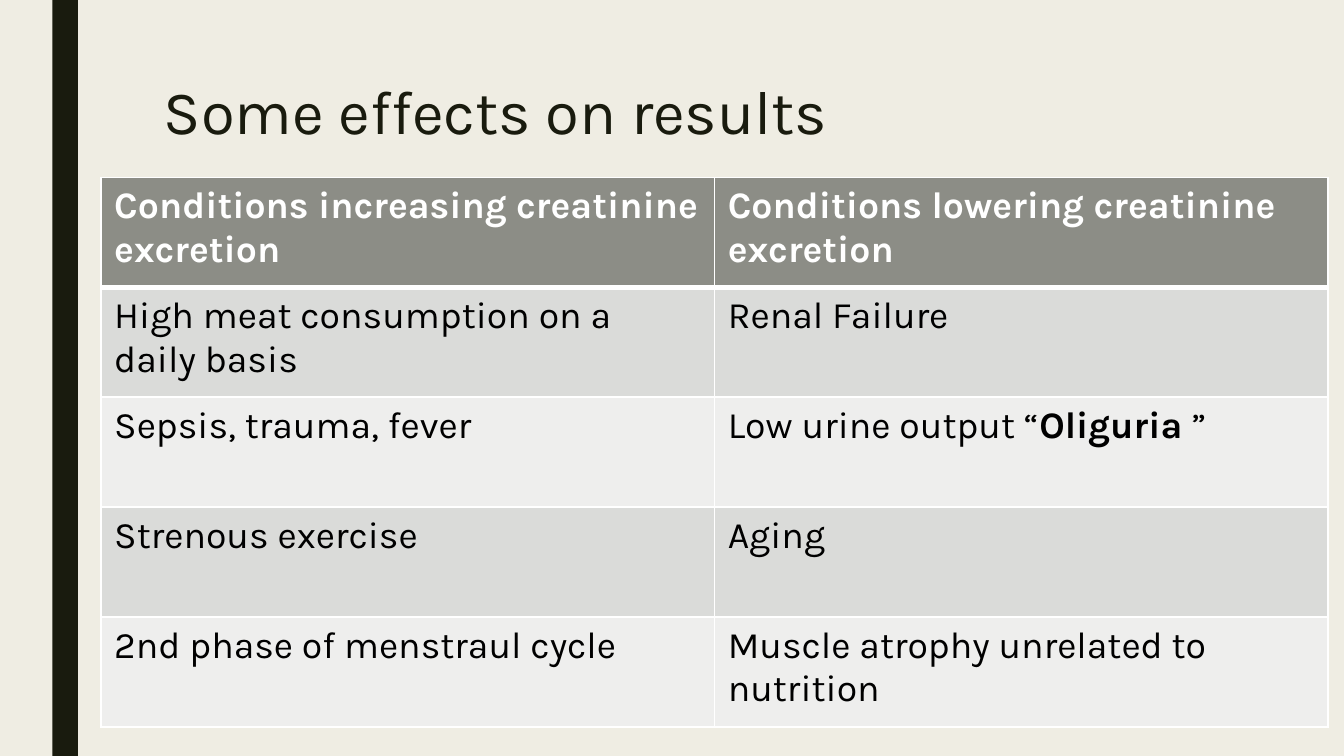
from lxml import etree
from pptx import Presentation
from pptx import util as u
from pptx.dml.color import RGBColor
from pptx.enum import shapes, text
from pptx.oxml.ns import qn

FONT = "Karla"
BACKGROUND, DARK = "EFEDE3", "191B0E"
WHITE, BLACK = "FFFFFF", "000000"
HEADER_FILL, BAND_FILLS = "8C8D86", ("DADBD9", "EEEEED")

# Each cell is a list of (text, bold) runs.
ROWS = [
    [[("Conditions increasing creatinine excretion", True)],
     [("Conditions lowering creatinine excretion", True)]],
    [[("High meat consumption on a daily basis", False)],
     [("Renal Failure", False)]],
    [[("Sepsis, trauma, fever", False)],
     [("Low urine output “", False), ("Oliguria", True), (" ”", False)]],
    [[("Strenous exercise", False)],
     [("Aging", False)]],
    [[("2nd phase of menstraul cycle", False)],
     [("Muscle atrophy unrelated to nutrition", False)]],
]


def set_fill(fill, color):
    fill.solid()
    fill.fore_color.rgb = RGBColor.from_string(color)


def add_run(paragraph, content, size, color, bold=False):
    run = paragraph.add_run()
    run.text = content
    run.font.name = FONT
    run.font.size = u.Pt(size)
    run.font.bold = bold
    run.font.color.rgb = RGBColor.from_string(color)


def add_side_bar(slide, height):
    bar = slide.shapes.add_shape(shapes.MSO_SHAPE.RECTANGLE, u.Inches(0.39), 0,
                                 u.Inches(0.19), height)
    bar.shadow.inherit = False
    set_fill(bar.fill, DARK)
    bar.line.fill.background()


def format_title(title, content):
    title.left, title.top = u.Inches(1.12), u.Inches(0.56)
    title.width, title.height = u.Inches(7.88), u.Inches(1.22)
    frame = title.text_frame
    frame.word_wrap = True
    frame.auto_size = text.MSO_AUTO_SIZE.NONE
    frame.vertical_anchor = text.MSO_ANCHOR.TOP
    paragraph = frame.paragraphs[0]
    paragraph.alignment = text.PP_ALIGN.LEFT
    paragraph.line_spacing = 0.89
    add_run(paragraph, content, 33, DARK)


def set_borders(cell, top, bottom):
    """Draw white borders; must run before the cell gets its fill."""
    properties = cell._tc.get_or_add_tcPr()
    for side, width in (("L", 1), ("R", 1), ("T", top), ("B", bottom)):
        line = etree.SubElement(properties, qn(f"a:ln{side}"), w=str(u.Pt(width)))
        fill = etree.SubElement(line, qn("a:solidFill"))
        etree.SubElement(fill, qn("a:srgbClr"), val=WHITE)


def add_conditions_table(slide):
    frame = slide.shapes.add_table(len(ROWS), len(ROWS[0]), u.Inches(0.75),
                                   u.Inches(1.32), u.Inches(9.13), u.Inches(4.09))
    table = frame.table
    for row_index, row in enumerate(ROWS):
        is_header = row_index == 0
        fill = HEADER_FILL if is_header else BAND_FILLS[(row_index - 1) % 2]
        for column_index, runs in enumerate(row):
            cell = table.cell(row_index, column_index)
            set_borders(cell, top=3 if row_index == 1 else 1,
                        bottom=3 if is_header else 1)
            set_fill(cell.fill, fill)
            for content, bold in runs:
                add_run(cell.text_frame.paragraphs[0], content, 20,
                        WHITE if is_header else BLACK, bold)


def main():
    presentation = Presentation()
    presentation.slide_width = u.Inches(10)
    presentation.slide_height = u.Inches(10 * 9 / 16)
    slide = presentation.slides.add_slide(presentation.slide_layouts[5])
    set_fill(slide.background.fill, BACKGROUND)
    add_side_bar(slide, presentation.slide_height)
    format_title(slide.shapes.title, "Some effects on results")
    add_conditions_table(slide)
    presentation.save("out.pptx")


if __name__ == "__main__":
    main()
